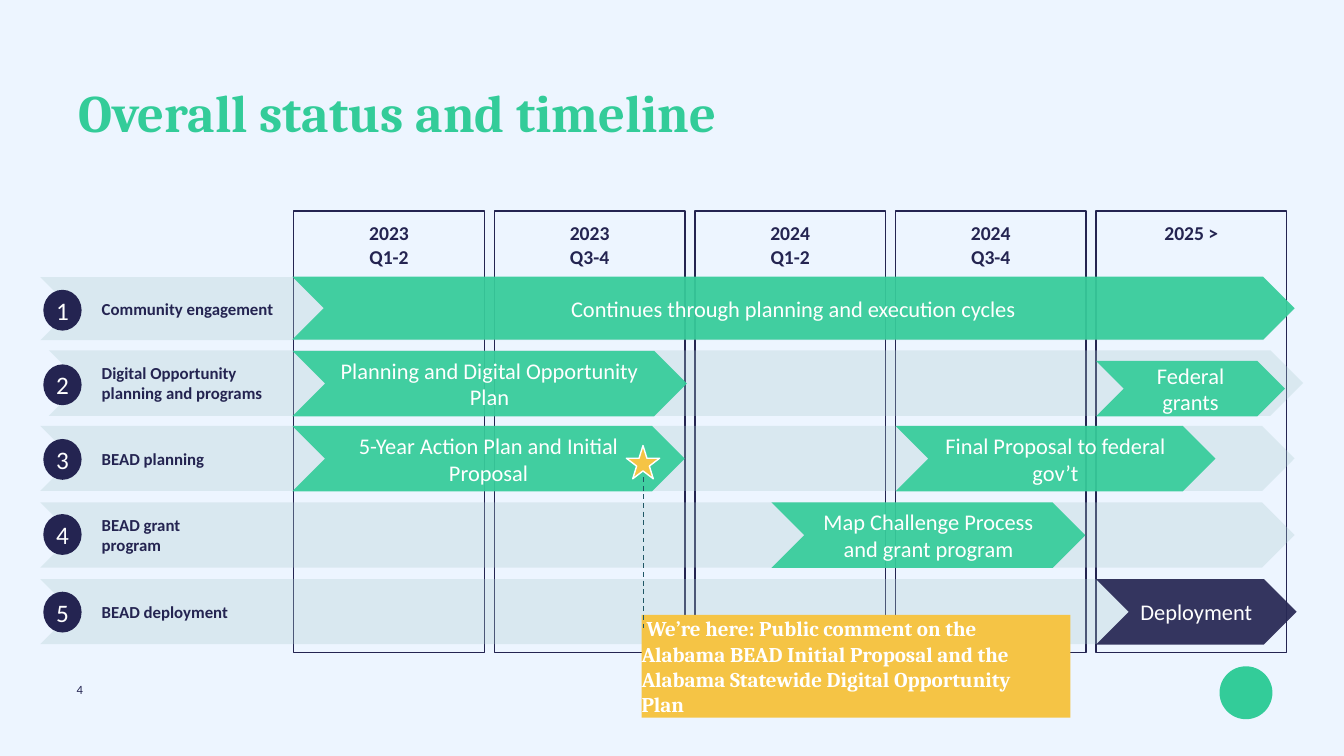
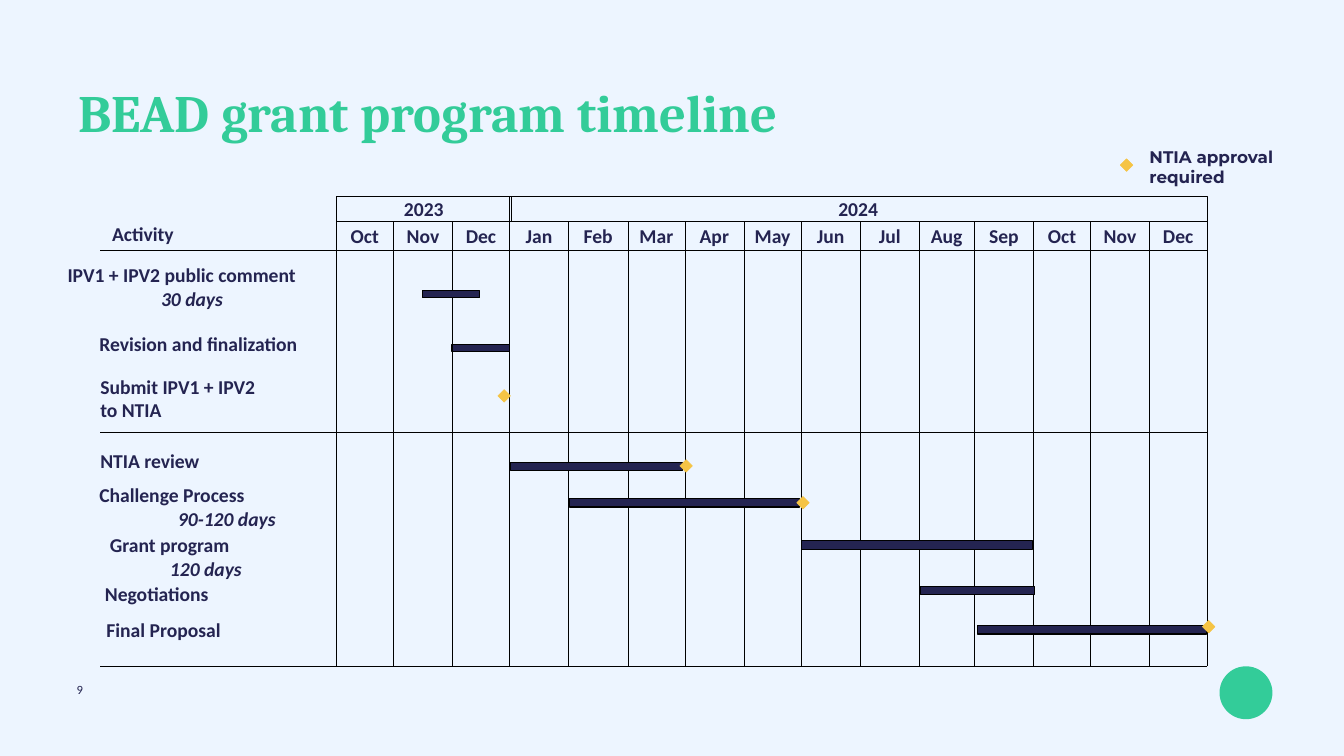
"""Build two slides on broadband grant status and timeline."""
from itertools import pairwise

from lxml.etree import SubElement
from pptx import Presentation
from pptx.dml.color import RGBColor
from pptx.enum.dml import MSO_LINE
from pptx.enum.shapes import MSO_CONNECTOR, MSO_SHAPE
from pptx.enum.text import MSO_ANCHOR, MSO_AUTO_SIZE, PP_ALIGN
from pptx.oxml.ns import qn
from pptx.util import Inches, Pt

PALE = RGBColor(0xED, 0xF5, 0xFF)
GREEN = RGBColor(0x33, 0xCC, 0x99)
NAVY = RGBColor(0x24, 0x24, 0x51)
MIST = RGBColor(0xAB, 0xCD, 0xD0)
GOLD = RGBColor(0xF5, 0xC4, 0x45)
TEAL = RGBColor(0x20, 0x57, 0x66)
WHITE = RGBColor(0xFF, 0xFF, 0xFF)
BLACK = RGBColor(0, 0, 0)

LEFT, CENTER = PP_ALIGN.LEFT, PP_ALIGN.CENTER
TOP, MIDDLE, BOTTOM = MSO_ANCHOR.TOP, MSO_ANCHOR.MIDDLE, MSO_ANCHOR.BOTTOM
INSETS = (0.1, 0.05, 0.1, 0.05)
NO_INSETS = (0, 0, 0, 0)


class Deck:
    """Holds the shared style and the current slide."""

    def __init__(self):
        self.prs = Presentation()
        self.prs.slide_width, self.prs.slide_height = Inches(26.67), Inches(15)
        self.s = None

    def slide(self, title, number):
        self.s = self.prs.slides.add_slide(self.prs.slide_layouts[5])
        self.s.background.fill.solid()
        self.s.background.fill.fore_color.rgb = PALE
        self.shape(MSO_SHAPE.OVAL, 24.2, 13.22, 1.05, 1.05, GREEN)
        sp = self.s.shapes.title
        sp.left, sp.top, sp.width, sp.height = map(Inches, (1.45, 1.67, 23.76, 1.25))
        self.label(sp, title, 75, GREEN, font="Cambria", anchor=TOP, spacing=0.9)
        self.text(number, 1.42, 13.52, 19.18, 0.37, 18, bold=False, spacing=0.9)

    def label(self, sp, text, size, color=NAVY, bold=True, font="Calibri", align=LEFT,
              anchor=TOP, insets=INSETS, wrap=True, spacing=None):
        tf = sp.text_frame
        tf.text = text
        tf.word_wrap = wrap
        tf.auto_size = MSO_AUTO_SIZE.NONE
        tf.vertical_anchor = anchor
        tf.margin_left, tf.margin_top, tf.margin_right, tf.margin_bottom = map(Inches, insets)
        for p in tf.paragraphs:
            p.alignment = align
            p.line_spacing = spacing
            p.font.size, p.font.name, p.font.bold = Pt(size), font, bold
            p.font.color.rgb = color
        return tf

    def text(self, text, x, y, w, h, size, **style):
        sp = self.s.shapes.add_textbox(*map(Inches, (x, y, w, h)))
        return self.label(sp, text, size, **style)

    def shape(self, kind, x, y, w, h, fill=None, line=None, width=0.75, alpha=None):
        sp = self.s.shapes.add_shape(kind, *map(Inches, (x, y, w, h)))
        sp.shadow.inherit = False
        if fill is None:
            sp.fill.background()
        else:
            sp.fill.solid()
            sp.fill.fore_color.rgb = fill
        if alpha:
            clr = sp._element.spPr.find(qn("a:solidFill"))[0]
            SubElement(clr, qn("a:alpha")).set("val", str(alpha * 1000))
        if line is None:
            sp.line.fill.background()
        else:
            sp.line.color.rgb = line
            sp.line.width = Pt(width)
        return sp

    def line(self, x1, y1, x2, y2, width, color=BLACK, dash=None):
        cx = self.s.shapes.add_connector(MSO_CONNECTOR.STRAIGHT,
                                         *map(Inches, (x1, y1, x2, y2)))
        cx.line.color.rgb = color
        cx.line.width = Pt(width)
        if dash:
            cx.line.dash_style = dash
        SubElement(cx._element.spPr, qn("a:effectLst"))

    def indent(self, p, attr, inches):
        p._p.get_or_add_pPr().set(attr, str(Inches(inches)))

    def phase(self, text, x, y, w, h, fill=GREEN):
        sp = self.shape(MSO_SHAPE.CHEVRON, x, y, w, h, fill, alpha=91)
        self.label(sp, text, 32, WHITE, bold=False, align=CENTER, anchor=MIDDLE)

    def header(self, text, x, y, w, h):
        sp = self.shape(MSO_SHAPE.RECTANGLE, x, y, w, h, line=BLACK)
        self.label(sp, text, 28, align=CENTER, anchor=MIDDLE, insets=(0, 0.05, 0, 0.05))

    def activity(self, text, x, y, w, h, align=LEFT, days=None, indent=0, anchor=TOP):
        tf = self.text(text, x, y, w, h, 28, align=align, anchor=anchor,
                       insets=NO_INSETS, wrap=False)
        if days:
            p = tf.add_paragraph()
            p.text = days
            p.alignment = CENTER
            self.indent(p, "marL", indent)
            p.font.size, p.font.name = Pt(28), "Calibri"
            p.font.bold = p.font.italic = True
            p.font.color.rgb = NAVY

    def bar(self, x, y, w, h=0.17):
        self.shape(MSO_SHAPE.RECTANGLE, x, y, w, h, NAVY, BLACK, 1.5)

    def milestone(self, x, y):
        self.shape(MSO_SHAPE.DIAMOND, x, y, 0.25, 0.25, GOLD, GOLD)


def status(deck):
    deck.slide("Overall status and timeline", "4")
    periods = ("2023\vQ1-2", "2023\vQ3-4", "2024\vQ1-2", "2024\vQ3-4", "2025 >")
    for i, period in enumerate(periods):
        sp = deck.shape(MSO_SHAPE.RECTANGLE, 5.83 + 3.98 * i, 4.19, 3.78, 8.76,
                        line=NAVY, width=2)
        deck.label(sp, period, 28, align=CENTER, insets=(0.2,) * 4)

    tracks = (
        (0.8, 5.5, 1.25, 5.75, "Community engagement"),
        (0.97, 6.95, 1.3, 7.23, "Digital Opportunity planning and programs"),
        (0.8, 8.45, 1.29, 8.71, "BEAD planning"),
        (0.8, 9.97, 1.29, 10.2, "BEAD grant\nprogram"),
        (0.8, 11.49, 1.29, 11.74, "BEAD deployment"),
    )
    for i, (x, y, h, badge_y, name) in enumerate(tracks, 1):
        deck.shape(MSO_SHAPE.CHEVRON, x, y, 24.89, h, MIST, alpha=30)
        deck.text(name, 1.92, y, 3.77, h, 24, anchor=MIDDLE)
        badge = deck.shape(MSO_SHAPE.OVAL, 0.86, badge_y, 0.76, 0.81, NAVY)
        deck.label(badge, str(i), 36, WHITE, bold=False, align=CENTER, anchor=MIDDLE,
                   insets=NO_INSETS)

    deck.phase("Continues through planning and execution cycles", 5.8, 5.49, 19.89, 1.25)
    deck.phase("Planning and Digital Opportunity Plan", 5.8, 6.96, 7.83, 1.3)
    deck.phase("Federal grants", 21.75, 7.16, 3.75, 1.1)
    deck.phase("5-Year Action Plan and Initial Proposal", 5.8, 8.45, 7.79, 1.3)
    deck.phase("Final Proposal to federal gov’t", 17.77, 8.45, 6.35, 1.3)
    deck.phase("Map Challenge Process and grant program", 15.31, 9.97, 6.23, 1.3)
    deck.phase("Deployment", 21.75, 11.49, 3.98, 1.3, NAVY)

    callout = deck.shape(MSO_SHAPE.RECTANGLE, 12.73, 12.2, 8.51, 2.04, GOLD)
    tf = deck.label(callout, "We’re here: Public comment on the\n"
                    "Alabama BEAD Initial Proposal and the\n"
                    "Alabama Statewide Digital Opportunity\nPlan",
                    30, WHITE, font="Cambria", anchor=MIDDLE, insets=NO_INSETS)
    deck.indent(tf.paragraphs[0], "indent", 0.1)
    deck.line(12.77, 9.47, 12.77, 12.47, 1.75, TEAL, MSO_LINE.DASH)
    deck.shape(MSO_SHAPE.STAR_5_POINT, 12.43, 8.84, 0.66, 0.66, GOLD, WHITE, 2)


def grant_timeline(deck):
    deck.slide("BEAD grant program timeline", "9")
    months = "Oct Nov Dec Jan Feb Mar Apr May Jun Jul Aug Sep Oct Nov Dec".split()
    edges = (6.67, 7.81, 8.98, 10.11, 11.28, 12.46, 13.59, 14.76, 15.9, 17.07,
             18.24, 19.33, 20.51, 21.64, 22.81, 23.95)
    head, bottom = 4.97, 13.21
    deck.header("2023", edges[0], 3.89, 3.48, 0.51)
    deck.header("2024", edges[3], 3.89, 13.84, 0.51)
    for month, (x, end) in zip(months, pairwise(edges)):
        deck.header(month, x, 4.4, end - x, 0.57)
    for x in edges:
        deck.line(x, head, x, bottom, 0.75 if x == edges[0] else 0.25)
    for y, width in ((head, 0.75), (8.58, 0.25), (bottom, 0.75)):
        deck.line(1.99, y, edges[-1], y, width)

    deck.activity("Activity", 2.22, 4.4, 1.23, 0.47, CENTER, anchor=BOTTOM)
    deck.activity("IPV1 + IPV2 public comment", 1.34, 5.22, 4.94, 0.48, days="30 days")
    deck.activity("Revision and finalization", 1.97, 6.58, 3.65, 0.48)
    deck.activity("Submit IPV1 + IPV2\vto NTIA", 1.99, 7.43, 4.52, 0.83)
    deck.activity("NTIA review", 1.99, 8.91, 2.86, 0.57)
    deck.activity("Challenge Process", 1.97, 9.59, 4.17, 0.41,
                  days="90-120 days", indent=0.89)
    deck.activity("Grant program", 1.56, 10.58, 3.61, 0.47, CENTER, "120 days", 1.44)
    deck.activity("Negotiations", 2.41, 11.54, 1.4, 0.67, CENTER)
    deck.activity("Final Proposal", 1.06, 12.27, 4.37, 0.47, CENTER)

    bars = ((8.38, 5.76, 1.14, 0.15), (8.97, 6.83, 1.14, 0.15), (10.13, 9.17, 3.41),
            (11.31, 9.89, 4.55), (15.91, 10.73, 4.58), (18.26, 11.63, 2.27),
            (19.39, 12.41, 4.56))
    for box in bars:
        deck.bar(*box)
    approvals = ((9.88, 7.73), (13.49, 9.12), (15.81, 9.85), (23.86, 12.31))
    legend = (22.23, 3.15)
    for x, y in (*approvals, legend):
        deck.milestone(x, y)
    deck.text("NTIA approval required", 22.81, 2.91, 2.93, 0.81, 24,
              font="Montserrat", insets=NO_INSETS)


def main():
    deck = Deck()
    status(deck)
    grant_timeline(deck)
    deck.prs.save("out.pptx")


if __name__ == "__main__":
    main()
